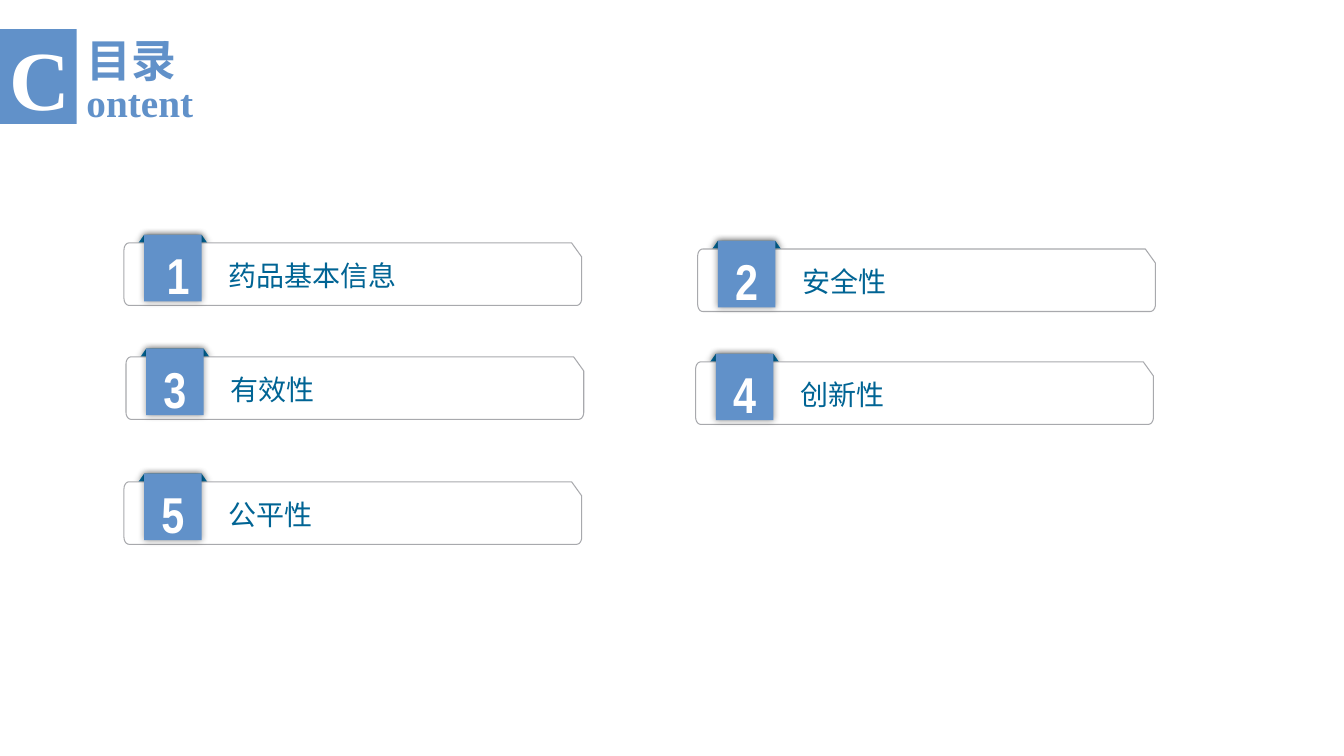
from dataclasses import dataclass
from math import cos, pi, sin

from lxml import etree
from pptx import Presentation
from pptx.dml.color import RGBColor
from pptx.enum.shapes import MSO_SHAPE
from pptx.enum.text import MSO_ANCHOR, MSO_AUTO_SIZE, PP_ALIGN
from pptx.oxml.ns import qn
from pptx.util import Inches, Pt

RECTANGLE = MSO_SHAPE.RECTANGLE
LEFT, CENTER, JUSTIFY = PP_ALIGN.LEFT, PP_ALIGN.CENTER, PP_ALIGN.JUSTIFY
TOP, MIDDLE = MSO_ANCHOR.TOP, MSO_ANCHOR.MIDDLE
GROW, FIXED = MSO_AUTO_SIZE.SHAPE_TO_FIT_TEXT, MSO_AUTO_SIZE.NONE


@dataclass(frozen=True)
class Theme:
    blue: str = "6191C9"
    teal: str = "006494"
    grey: str = "A8A9AD"
    white: str = "FFFFFF"
    shade: str = "000000"
    serif: str = "Times New Roman"
    sans: str = "Arial"
    narrow: str = "Arial Narrow"
    chinese: str = "Noto Sans CJK SC"
    label_size: int = 20
    subtitle_size: int = 28
    title_size: int = 32
    number_size: int = 36
    initial_size: int = 60


class ContentsSlide:
    def __init__(self, slide, theme):
        self.shapes = slide.shapes
        self.theme = theme

    def paint(self, shape, fill, line=None, shadow=False):
        shape.shadow.inherit = False
        shape.fill.solid()
        shape.fill.fore_color.rgb = RGBColor.from_string(fill)
        if line:
            shape.line.color.rgb = RGBColor.from_string(line)
            shape.line.width = Pt(0)
        else:
            shape.line.fill.background()
        if shadow:
            effects = shape._element.spPr.find(qn("a:effectLst"))
            outer = etree.SubElement(effects, qn("a:outerShdw"), blurRad=str(Pt(5)),
                                     dist="0", algn="ctr", rotWithShape="0")
            color = etree.SubElement(outer, qn("a:srgbClr"), val=self.theme.shade)
            etree.SubElement(color, qn("a:alpha"), val="40000")

    def set_words(self, shape, words, size, font, color, bold=True, align=LEFT,
                  anchor=TOP, wrap=True, fit=FIXED):
        frame = shape.text_frame
        frame.word_wrap = wrap
        frame.auto_size = fit
        frame.vertical_anchor = anchor
        paragraph = frame.paragraphs[0]
        paragraph.text = words
        paragraph.alignment = align
        paragraph.font.size = Pt(size)
        paragraph.font.bold = bold
        paragraph.font.color.rgb = RGBColor.from_string(color)
        paragraph.font.name = font
        etree.SubElement(paragraph.font._rPr, qn("a:ea"), typeface=self.theme.chinese)

    def text(self, left, top, width, height, words, size, font, color, **style):
        box = self.shapes.add_textbox(Inches(left), Inches(top), Inches(width), Inches(height))
        self.set_words(box, words, size, font, color, **style)

    def tile(self, left, top, width, height, shadow=False):
        tile = self.shapes.add_shape(RECTANGLE, Inches(left), Inches(top),
                                     Inches(width), Inches(height))
        self.paint(tile, self.theme.blue, shadow=shadow)
        return tile

    def outline(self, points, fill, line=None, shadow=False):
        corners = [(Inches(x), Inches(y)) for x, y in points]
        builder = self.shapes.build_freeform(*corners[0])
        builder.add_line_segments(corners[1:], close=True)
        self.paint(builder.convert_to_shape(), fill, line, shadow)

    def ribbon(self, left, top):
        points = [(left, top), (left + 0.57, top), (left + 0.64, top + 0.1),
                  (left - 0.07, top + 0.1)]
        self.outline(points, self.theme.teal, shadow=True)

    def panel(self, left, top, width=4.54, height=0.62):
        right, bottom = left + width, top + height
        rx, ry, steps = 0.05, 0.07, 6

        def corner(x, y, start):
            angles = [start + pi / 2 * step / steps for step in range(steps + 1)]
            return [(x + rx * cos(angle), y + ry * sin(angle)) for angle in angles]

        points = [(right - 0.1, top), (right, top + 0.14)]
        points += corner(right - rx, bottom - ry, 0)
        points += corner(left + rx, bottom - ry, pi / 2)
        points += corner(left + rx, top + ry, pi)
        self.outline(points, self.theme.white, line=self.theme.grey)

    def entry(self, number, label, left, top, number_width):
        theme = self.theme
        self.ribbon(left, top)
        self.panel(left - 0.2, top + 0.08)
        self.tile(left, top, 0.57, 0.66, shadow=True)
        self.text(left + 0.74, top + 0.19, 3.45, 0.44, label, theme.label_size,
                  theme.chinese, theme.teal, bold=False, fit=GROW)
        self.text(left + (0.57 - number_width) / 2, top + 0.04, number_width, 0.71,
                  str(number), theme.number_size, theme.narrow, theme.white,
                  align=CENTER, wrap=False, fit=GROW)

    def heading(self):
        theme = self.theme
        self.text(0.76, 0.77, 1.7, 0.48, "ontent", theme.subtitle_size, theme.serif,
                  theme.blue, anchor=MIDDLE)
        initial = self.tile(0, 0.29, 0.76, 0.94)
        self.set_words(initial, "C", theme.initial_size, theme.serif, theme.white,
                       align=CENTER, anchor=MIDDLE)
        self.text(0.76, 0.28, 1.24, 0.64, "目录", theme.title_size, theme.sans,
                  theme.blue, align=JUSTIFY, fit=GROW)


def main():
    presentation = Presentation()
    presentation.slide_width = Inches(13.33)
    presentation.slide_height = Inches(7.5)
    slide = presentation.slides.add_slide(presentation.slide_layouts[6])
    contents = ContentsSlide(slide, Theme())
    entries = [
        ("药品基本信息", 1.43, 2.33, 0.32),
        ("安全性", 7.12, 2.39, 0.43),
        ("有效性", 1.45, 3.46, 0.43),
        ("创新性", 7.1, 3.51, 0.43),
        ("公平性", 1.43, 4.7, 0.43),
    ]
    for number, entry in enumerate(entries, start=1):
        contents.entry(number, *entry)
    contents.heading()
    presentation.save("out.pptx")


if __name__ == "__main__":
    main()
